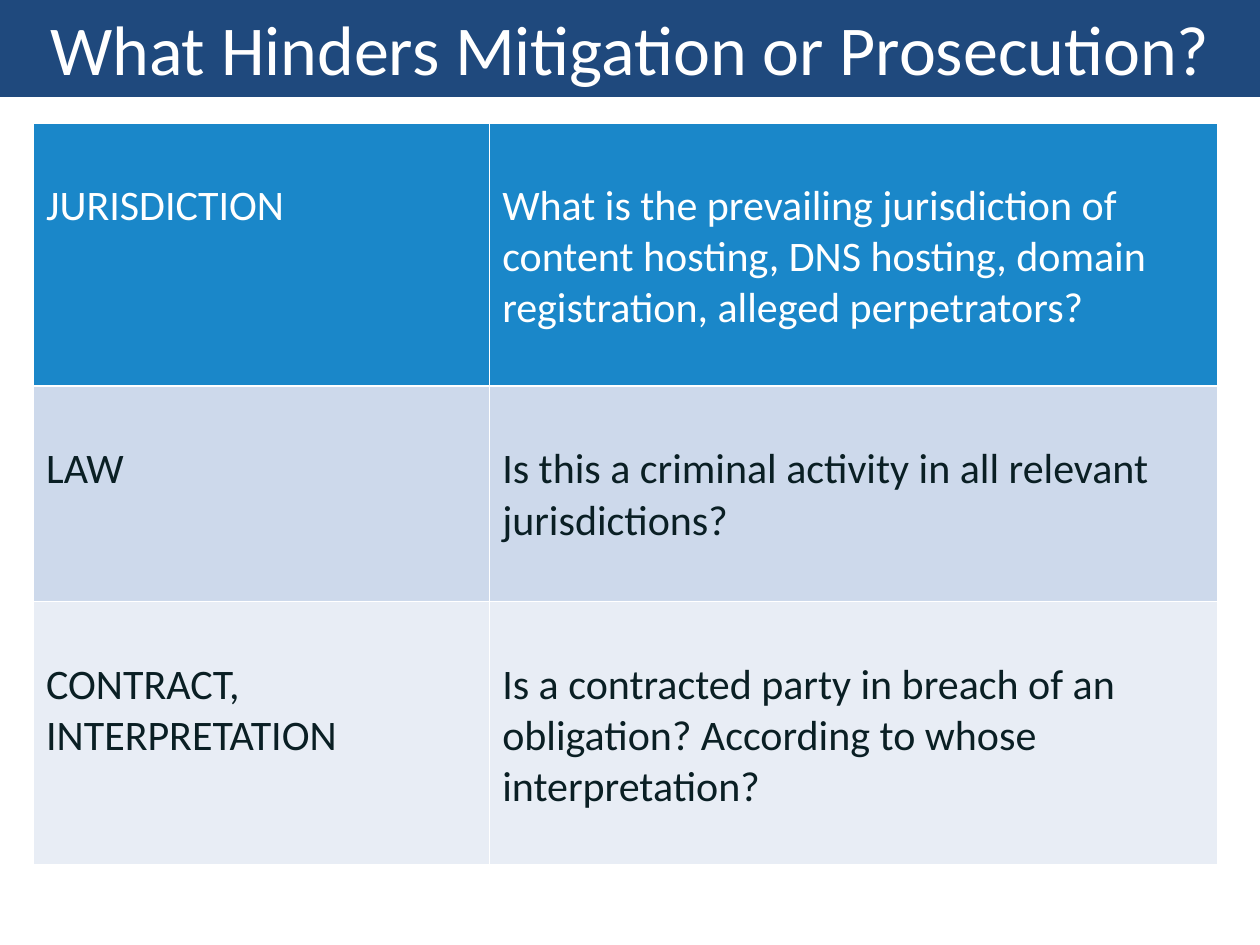
from lxml import etree
from pptx import Presentation, util as u
from pptx.dml.color import RGBColor
from pptx.enum import text
from pptx.oxml.ns import qn

COLORS = {
    "banner": "1F497D",
    "header": "1A87C9",
    "band_dark": "CDD9EB",
    "band_light": "E8EDF5",
    "white": "FFFFFF",
    "ink": "0A1F24",
}
FONT = "Calibri"
COLUMN_WIDTHS = (260.64, 416.16)
CELL_MARGINS = {"margin_top": u.Pt(33), "margin_bottom": u.Pt(3.6),
                "margin_left": u.Pt(7.2), "margin_right": u.Pt(7.2)}

# Row height, fill, text colour, topic, question
ROWS = [
    (150.5, "header", "white", "JURISDICTION",
     "What is the prevailing jurisdiction of content hosting, DNS hosting, "
     "domain registration, alleged perpetrators?"),
    (123, "band_dark", "ink", "LAW",
     "Is this a criminal activity in all relevant jurisdictions?"),
    (150.5, "band_light", "ink", "CONTRACT, INTERPRETATION",
     "Is a contracted party in breach of an obligation? "
     "According to whose interpretation?"),
]


def set_attributes(target, values):
    for name, value in values.items():
        setattr(target, name, value)


def set_fill(target, color):
    target.fill.solid()
    target.fill.fore_color.rgb = RGBColor.from_string(COLORS[color])


def write_text(frame, content, size, color, alignment):
    paragraph = frame.paragraphs[0]
    paragraph.alignment = alignment
    run = paragraph.add_run()
    run.text = content
    set_attributes(run.font, {"name": FONT, "size": u.Pt(size), "bold": False})
    run.font.color.rgb = RGBColor.from_string(COLORS[color])


def set_borders(cell, color, width):
    properties = cell._tc.get_or_add_tcPr()
    for index, side in enumerate(("lnL", "lnR", "lnT", "lnB")):
        line = etree.Element(qn(f"a:{side}"), w=str(u.Pt(width)))
        solid = etree.SubElement(line, qn("a:solidFill"))
        etree.SubElement(solid, qn("a:srgbClr"), val=COLORS[color])
        properties.insert(index, line)


def add_title(slide, content):
    title = slide.shapes.title
    set_attributes(title, {"left": u.Pt(0), "top": u.Pt(-0.72),
                           "width": u.Pt(720), "height": u.Pt(56.16)})
    set_fill(title, "banner")
    set_attributes(title.text_frame, {
        "auto_size": text.MSO_AUTO_SIZE.NONE,
        "vertical_anchor": text.MSO_ANCHOR.MIDDLE,
        "word_wrap": True,
    })
    write_text(title.text_frame, content, 40, "white", text.PP_ALIGN.CENTER)


def add_topic_table(slide):
    height = sum(row[0] for row in ROWS)
    frame = slide.shapes.add_table(
        len(ROWS), len(COLUMN_WIDTHS), u.Pt(19.2), u.Pt(70.2),
        u.Pt(sum(COLUMN_WIDTHS)), u.Pt(height))
    table = frame.table
    set_attributes(table, {"first_row": False, "horz_banding": False})
    for column, width in zip(table.columns, COLUMN_WIDTHS):
        column.width = u.Pt(width)
    for row, (row_height, fill, ink, *contents) in zip(table.rows, ROWS):
        row.height = u.Pt(row_height)
        for cell, content in zip(row.cells, contents):
            set_attributes(cell, CELL_MARGINS)
            set_fill(cell, fill)
            set_borders(cell, "white", 1)
            write_text(cell.text_frame, content, 24, ink, text.PP_ALIGN.LEFT)


def main():
    presentation = Presentation()
    set_attributes(presentation, {"slide_width": u.Pt(720),
                                  "slide_height": u.Pt(540)})
    slide = presentation.slides.add_slide(presentation.slide_layouts[5])

    # Title banner
    add_title(slide, "What Hinders Mitigation or Prosecution?")

    # Obstacles and the questions they raise
    add_topic_table(slide)

    presentation.save("out.pptx")


if __name__ == "__main__":
    main()
